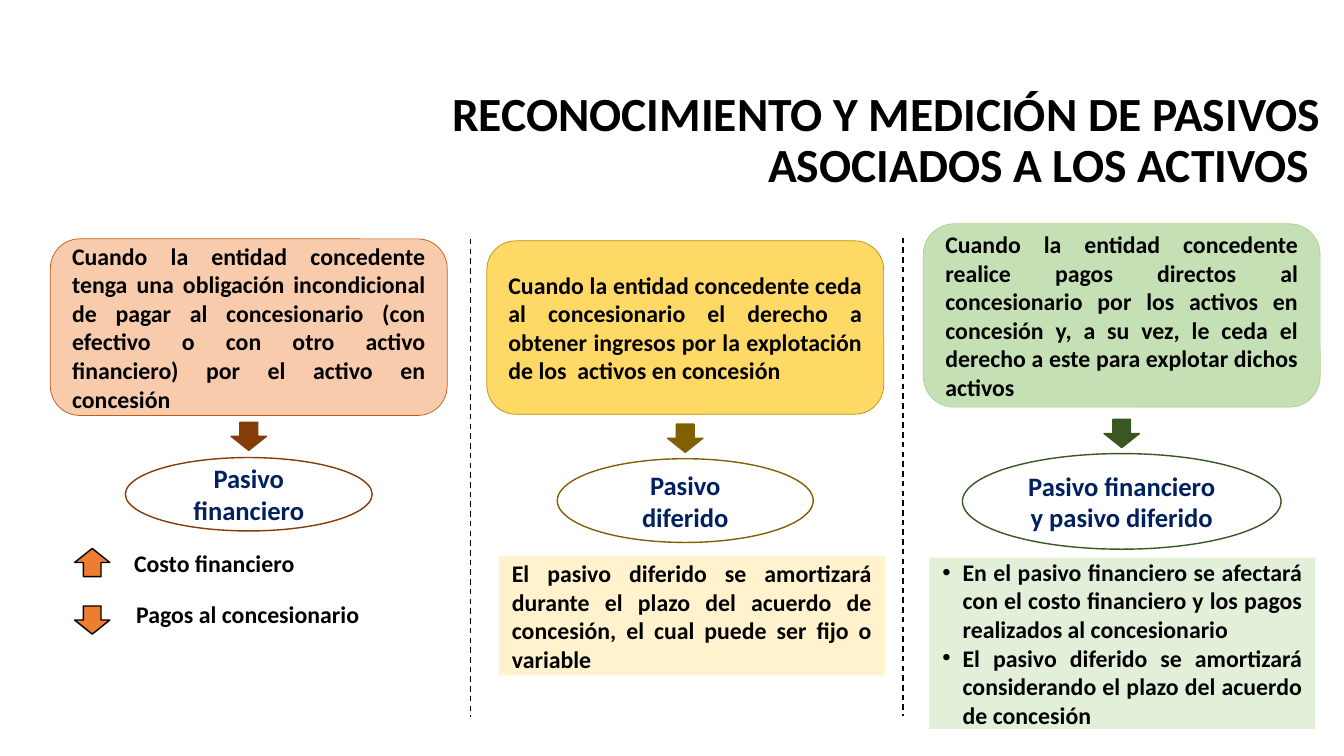
from pptx import Presentation
from pptx.dml.color import RGBColor
from pptx.enum.dml import MSO_LINE
from pptx.enum.shapes import MSO_CONNECTOR, MSO_SHAPE as Shape
from pptx.enum.text import MSO_ANCHOR as Anchor, MSO_AUTO_SIZE, PP_ALIGN as Align
from pptx.oxml.ns import qn
from pptx.util import Cm, Pt
from lxml.etree import SubElement

COLORS = {
    "black": "000000", "white": "FFFFFF", "navy": "002060", "orange": "ED7D31",
    "peach": "F8CBAD", "rust": "C55A11", "brown": "843C0B",
    "yellow": "FFD966", "gold": "BF9000", "olive": "806000", "cream": "FFF2CC",
    "green": "C5E0B4", "leaf": "A9D18E", "forest": "385723", "mint": "E2F0D9",
}

# Each card and oval gives its own top and size; the columns share a pitch.
COLUMNS = [
    dict(card="Cuando la entidad concedente tenga una obligación incondicional de pagar "
              "al concesionario (con efectivo o con otro activo financiero) por el activo "
              "en concesión",
         card_box=(6.02, 4.45), fill="peach", border="rust", accent="brown",
         arrow_top=10.64, oval="Pasivo financiero", oval_box=(11.53, 6.22, 1.85)),
    dict(card="Cuando la entidad concedente ceda al concesionario el derecho a obtener "
              "ingresos por la explotación de los  activos en concesión",
         card_box=(6.07, 4.37), fill="yellow", border="gold", accent="olive",
         arrow_top=10.69, oval="Pasivo diferido", oval_box=(11.56, 6.45, 2.11)),
    dict(card="Cuando la entidad concedente realice pagos directos al concesionario por "
              "los activos en concesión y, a su vez, le ceda el derecho a este para "
              "explotar dichos activos",
         card_box=(5.64, 4.62), fill="green", border="leaf", accent="forest",
         arrow_top=10.57, oval="Pasivo financiero y pasivo diferido",
         oval_box=(11.43, 8.03, 2.41)),
]
FIRST_CENTER, COLUMN_PITCH, CARD_WIDTH = 6.27, 11, 10
ARROW_WIDTH, ARROW_HEIGHT = 0.89, 0.71


def color(name):
    return RGBColor.from_string(COLORS[name])


def add_bullet(paragraph):
    properties = paragraph._p.get_or_add_pPr()
    properties.set("marL", str(Cm(0.51)))
    properties.set("indent", str(-Cm(0.51)))
    SubElement(properties, qn("a:buFont")).set("typeface", "Arial")
    SubElement(properties, qn("a:buChar")).set("char", "•")


def write(frame, *texts, size=17, ink="black", align=Align.JUSTIFY,
          anchor=Anchor.MIDDLE, spacing=None, bullets=False):
    """Fill a text frame with one paragraph per text."""
    frame.word_wrap = True
    frame.vertical_anchor = anchor
    frame.margin_left = frame.margin_right = Cm(0.33)
    frame.margin_top = frame.margin_bottom = Cm(0.16)
    for index, text in enumerate(texts):
        paragraph = frame.add_paragraph() if index else frame.paragraphs[0]
        if bullets:
            add_bullet(paragraph)
        paragraph.alignment = align
        if spacing:
            paragraph.line_spacing = spacing
        run = paragraph.add_run()
        run.text = text
        run.font.name = "Calibri"
        run.font.size = Pt(size)
        run.font.bold = True
        run.font.color.rgb = color(ink)


class SlideBuilder:
    """Holds the current slide; all lengths are in centimetres."""

    def __init__(self, presentation):
        self.slide = presentation.slides.add_slide(presentation.slide_layouts[5])
        self.shapes = self.slide.shapes

    def title(self, text, left, top, width, height):
        title = self.shapes.title
        title.left, title.top = Cm(left), Cm(top)
        title.width, title.height = Cm(width), Cm(height)
        write(title.text_frame, text, size=34, align=Align.RIGHT,
              anchor=Anchor.TOP, spacing=0.9)
        title.text_frame.auto_size = MSO_AUTO_SIZE.NONE

    def shape(self, kind, left, top, width, height, fill, border=None, weight=1):
        shape = self.shapes.add_shape(kind, Cm(left), Cm(top), Cm(width), Cm(height))
        shape.shadow.inherit = False
        shape.fill.solid()
        shape.fill.fore_color.rgb = color(fill)
        if border:
            shape.line.color.rgb = color(border)
            shape.line.width = Pt(weight)
        else:
            shape.line.fill.background()
        return shape

    def label(self, text, left, top, width, height):
        box = self.shapes.add_textbox(Cm(left), Cm(top), Cm(width), Cm(height))
        write(box.text_frame, text)
        box.text_frame.auto_size = MSO_AUTO_SIZE.SHAPE_TO_FIT_TEXT

    def divider(self, x, top, bottom):
        line = self.shapes.add_connector(MSO_CONNECTOR.STRAIGHT,
                                         Cm(x), Cm(top), Cm(x), Cm(bottom))
        line.line.color.rgb = color("black")
        line.line.width = Pt(1)
        line.line.dash_style = MSO_LINE.DASH
        SubElement(line._element.spPr, qn("a:effectLst"))

    def note(self, *texts, left, top, height, fill, bullets=False):
        shape = self.shape(Shape.RECTANGLE, left, top, 9.73, height, fill)
        write(shape.text_frame, *texts, bullets=bullets)

    def arrow(self, kind, left, top, fill, border):
        self.shape(kind, left, top, ARROW_WIDTH, ARROW_HEIGHT, fill, border)

    def column(self, center, content):
        """Draw a card, the arrow below it and the oval it leads to."""
        top, height = content["card_box"]
        card = self.shape(Shape.ROUNDED_RECTANGLE, center - CARD_WIDTH / 2, top,
                          CARD_WIDTH, height, content["fill"], content["border"], 0.5)
        write(card.text_frame, content["card"])
        accent = content["accent"]
        self.arrow(Shape.DOWN_ARROW, center - ARROW_WIDTH / 2, content["arrow_top"],
                   accent, accent)
        top, width, height = content["oval_box"]
        oval = self.shape(Shape.OVAL, center - width / 2, top, width, height,
                          "white", accent)
        write(oval.text_frame, content["oval"], size=19, ink="navy", align=Align.CENTER)


def main():
    presentation = Presentation()
    presentation.slide_width, presentation.slide_height = Cm(33.87), Cm(19.05)
    builder = SlideBuilder(presentation)

    builder.title("RECONOCIMIENTO Y MEDICIÓN DE PASIVOS ASOCIADOS A LOS ACTIVOS ",
                  10.26, 2.11, 23.34, 2.34)
    builder.divider(11.86, 6.02, 18.08)
    builder.divider(22.76, 5.99, 18.03)
    for index, content in enumerate(COLUMNS):
        builder.column(FIRST_CENTER + index * COLUMN_PITCH, content)

    builder.arrow(Shape.UP_ARROW, 1.88, 13.82, "orange", "black")
    builder.label("Costo financiero", 3.05, 13.64, 8.2, 1.07)
    builder.arrow(Shape.DOWN_ARROW, 1.88, 15.27, "orange", "black")
    builder.label("Pagos al concesionario", 3.1, 14.94, 8.08, 1.07)

    builder.note("El pasivo diferido se amortizará durante el plazo del acuerdo de "
                 "concesión, el cual puede ser fijo o variable",
                 left=12.57, top=14.02, height=3, fill="cream")
    builder.note("En el pasivo financiero se afectará con el costo financiero y los "
                 "pagos realizados al concesionario ",
                 "El pasivo diferido se amortizará considerando el plazo del acuerdo "
                 "de concesión",
                 left=23.42, top=14.05, height=4.32, fill="mint", bullets=True)
    presentation.save("out.pptx")


if __name__ == "__main__":
    main()
